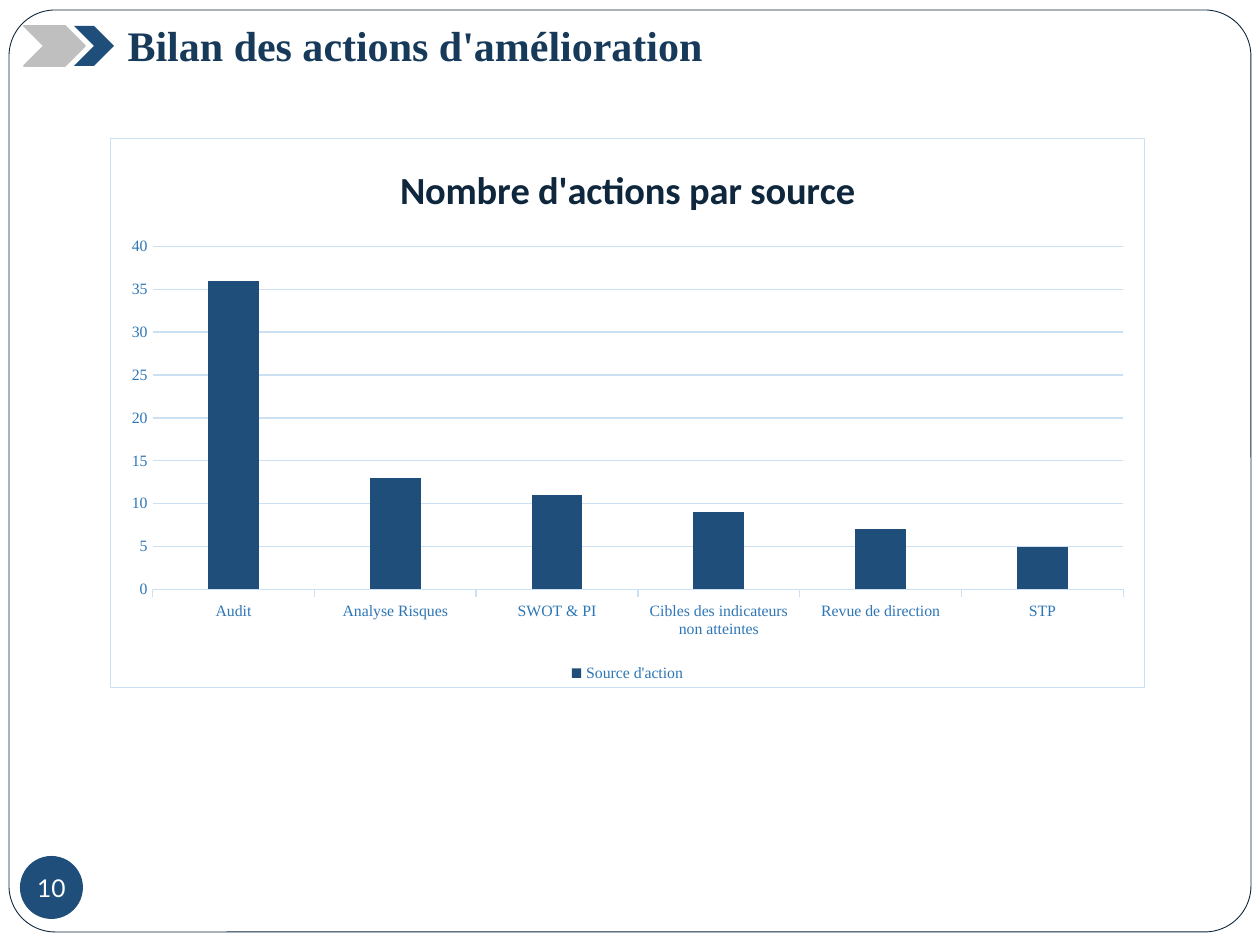
import pptx
import pptx.util
import pptx.chart.data
import pptx.dml.color
import pptx.enum.chart
import pptx.enum.shapes
import pptx.enum.text
import pptx.oxml
import pptx.oxml.ns

# Content
TITLE = "Bilan des actions d'amélioration"
PAGE_NUMBER = "10"
CHART_TITLE = "Nombre d'actions par source"
SERIES_NAME = "Source d'action"
ACTIONS = [
    ("Audit", 36),
    ("Analyse Risques", 13),
    ("SWOT & PI", 11),
    ("Cibles des indicateurs non atteintes", 9),
    ("Revue de direction", 7),
    ("STP", 5),
]

# Style and places, in px: left, top, width, height
COLOURS = {"white": "FFFFFF", "ink": "0F273C", "title": "173A5B", "navy": "1E4E79",
           "grey": "BFBFBF", "label": "2D76B6", "grid": "CBE0F2"}
SERIF = "Times New Roman"
PX = 914400 / 126
FRAME = (9, 10, 1242, 922)
HEADING = (115, 13, 822, 63)
CHEVRONS = [((24, 26, 61, 40), "grey", "grey"), ((74, 26, 40, 40), "navy", None)]
BADGE = (20, 856, 63, 63)
CHART = (110, 138, 1035, 550)
PLOT = (152, 246, 972, 344)

SHAPE = pptx.enum.shapes.MSO_SHAPE
ALIGN = pptx.enum.text.PP_ALIGN
MIDDLE = pptx.enum.text.MSO_ANCHOR.MIDDLE
TICK = pptx.enum.chart.XL_TICK_MARK


def emu(box):
    return [round(length * PX) for length in box]


def rgb(name):
    return pptx.dml.color.RGBColor.from_string(COLOURS[name])


def set_font(font, name, size, colour, bold=False):
    font.name, font.size, font.bold = name, pptx.util.Pt(size), bold
    font.color.rgb = rgb(colour)


def set_line(line, colour, width):
    line.color.rgb = rgb(colour)
    line.width = pptx.util.Pt(width)


def add_shape(kind, box, fill, line=None, width=1):
    shape = page.shapes.add_shape(kind, *emu(box))
    shape.shadow.inherit = False
    shape.fill.solid()
    shape.fill.fore_color.rgb = rgb(fill)
    if line:
        set_line(shape.line, line, width)
    else:
        shape.line.fill.background()
    return shape


def chart_xml(body):
    return pptx.oxml.parse_xml(body.replace(">", " " + pptx.oxml.ns.nsdecls("c", "a") + ">", 1))


deck = pptx.Presentation()
deck.slide_width, deck.slide_height = emu((1260, 945))
page = deck.slides.add_slide(deck.slide_layouts[5])

# Rounded page frame, behind everything
frame = add_shape(SHAPE.ROUNDED_RECTANGLE, FRAME, "white", "ink", 0.5)
frame.adjustments[0] = 0.05
page.shapes[0]._element.addprevious(frame._element)

# Heading
heading = page.shapes.title
heading.left, heading.top, heading.width, heading.height = emu(HEADING)
heading.text_frame.text = TITLE
heading.text_frame.vertical_anchor = MIDDLE
para = heading.text_frame.paragraphs[0]
para.alignment = ALIGN.LEFT
set_font(para.font, SERIF, 24, "title", True)

for box, fill, line in CHEVRONS:
    add_shape(SHAPE.CHEVRON, box, fill, line)

# Page number badge
badge = add_shape(SHAPE.OVAL, BADGE, "navy")
text = badge.text_frame
text.margin_left = text.margin_right = text.margin_top = text.margin_bottom = 0
text.word_wrap = False
text.vertical_anchor = MIDDLE
text.text = PAGE_NUMBER
text.paragraphs[0].alignment = ALIGN.CENTER
set_font(text.paragraphs[0].font, "Lato", 14, "white")

# Chart
data = pptx.chart.data.CategoryChartData()
data.categories = [source for source, count in ACTIONS]
data.add_series(SERIES_NAME, [count for source, count in ACTIONS])
chart = page.shapes.add_chart(
    pptx.enum.chart.XL_CHART_TYPE.COLUMN_CLUSTERED, *emu(CHART), data).chart
set_font(chart.font, SERIF, 10, "ink")

chart.has_title = True
chart.chart_title.text_frame.text = CHART_TITLE
set_font(chart.chart_title.text_frame.paragraphs[0].font, "Calibri", 22, "ink", True)

chart.has_legend = True
chart.legend.position = pptx.enum.chart.XL_LEGEND_POSITION.BOTTOM
chart.legend.include_in_layout = False
set_font(chart.legend.font, SERIF, 9, "label")

plot = chart.plots[0]
plot.gap_width, plot.overlap, plot.vary_by_categories = 219, -27, False
bars = plot.series[0].format.fill
bars.solid()
bars.fore_color.rgb = rgb("navy")

# Axes
for axis in (chart.category_axis, chart.value_axis):
    set_font(axis.tick_labels.font, SERIF, 9, "label")
    axis.minor_tick_mark = TICK.NONE
chart.category_axis.major_tick_mark = TICK.OUTSIDE
set_line(chart.category_axis.format.line, "grid", 0.75)
values = chart.value_axis
values.minimum_scale, values.maximum_scale, values.major_unit = 0, 40, 5
values.major_tick_mark = TICK.NONE
values.format.line.fill.background()
values.has_major_gridlines = True
set_line(values.major_gridlines.format.line, "grid", 0.75)

# Chart background, border and inner plot position
space = chart._chartSpace
space.xpath("c:txPr")[0].addprevious(chart_xml(
    f'<c:spPr><a:solidFill><a:srgbClr val="{COLOURS["white"]}"/></a:solidFill>'
    f'<a:ln w="9525"><a:solidFill><a:srgbClr val="{COLOURS["grid"]}"/></a:solidFill></a:ln></c:spPr>'))
shares = {
    "x": (PLOT[0] - CHART[0]) / CHART[2], "y": (PLOT[1] - CHART[1]) / CHART[3],
    "w": PLOT[2] / CHART[2], "h": PLOT[3] / CHART[3],
}
area = space.xpath("c:chart/c:plotArea")[0]
for layout in area.xpath("c:layout"):
    area.remove(layout)
area.insert(0, chart_xml(
    '<c:layout><c:manualLayout><c:layoutTarget val="inner"/>'
    '<c:xMode val="edge"/><c:yMode val="edge"/>'
    + "".join(f'<c:{key} val="{share:.4f}"/>' for key, share in shares.items())
    + "</c:manualLayout></c:layout>"))
for overlay in space.xpath("c:chart/c:title/c:overlay"):
    overlay.set("val", "1")

deck.save("out.pptx")
